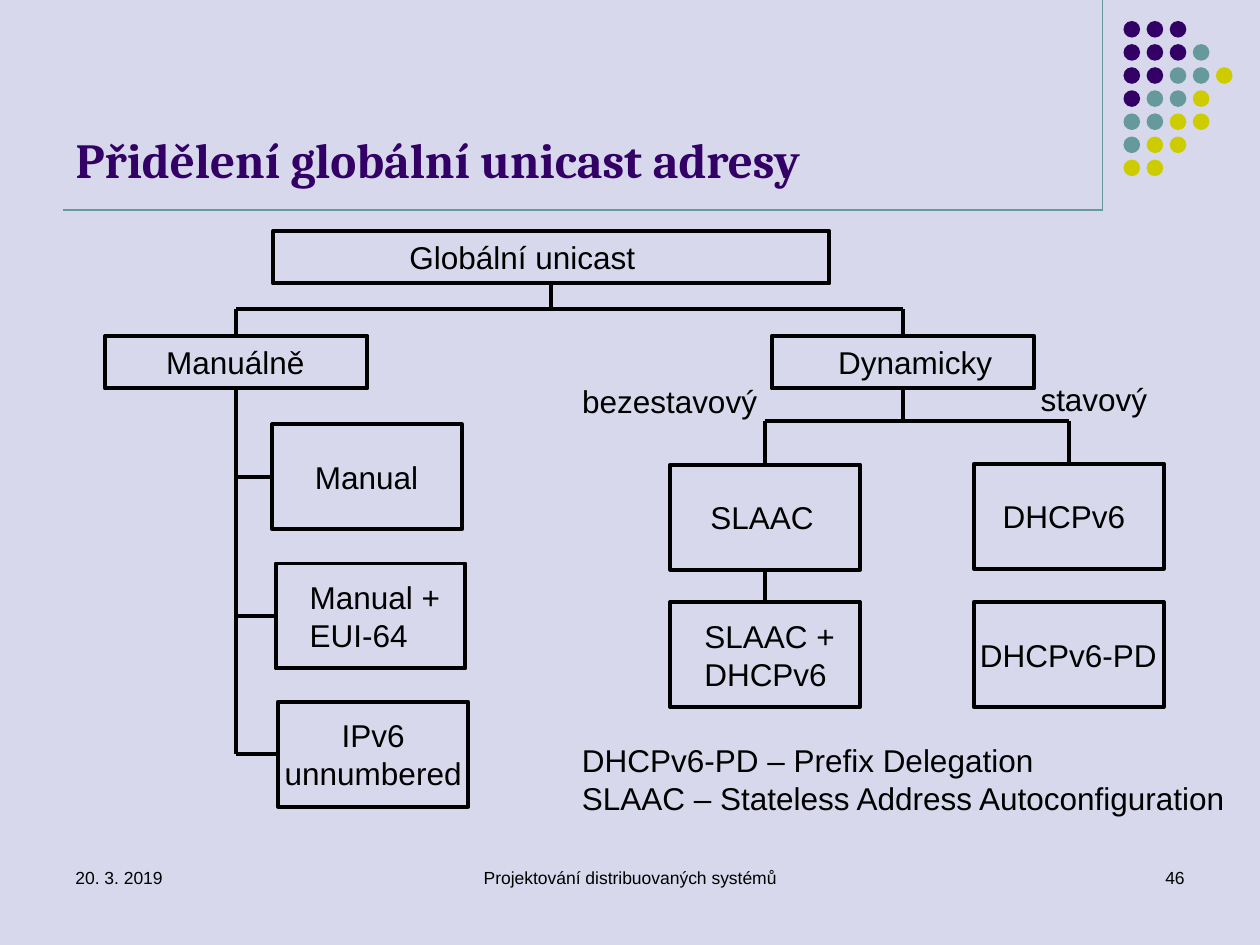
from lxml.etree import SubElement
from pptx import Presentation
from pptx.dml.color import RGBColor
from pptx.enum.shapes import MSO_CONNECTOR, MSO_SHAPE
from pptx.enum.text import MSO_ANCHOR, PP_ALIGN
from pptx.oxml.ns import qn
from pptx.util import Pt

BACKGROUND = RGBColor(0xD8, 0xD8, 0xEC)
PURPLE = RGBColor(0x33, 0x00, 0x66)
TEAL = RGBColor(0x66, 0x99, 0x99)
YELLOW = RGBColor(0xCC, 0xCC, 0x00)
BLACK = RGBColor(0, 0, 0)
TOP, LEFT, BOTTOM = 0, 1, 2

presentation = Presentation()
presentation.slide_width = Pt(720)
presentation.slide_height = Pt(540)
slide = presentation.slides.add_slide(presentation.slide_layouts[5])
slide.background.fill.solid()
slide.background.fill.fore_color.rgb = BACKGROUND


def add_line(x1, y1, x2, y2, color=BLACK, width=2.25):
    line = slide.shapes.add_connector(
        MSO_CONNECTOR.STRAIGHT, Pt(x1), Pt(y1), Pt(x2), Pt(y2))
    line.line.color.rgb = color
    line.line.width = Pt(width)
    SubElement(line._element.spPr, qn("a:effectLst"))
    return line


def write(shape, text, size=18, align=PP_ALIGN.LEFT):
    shape.text_frame.text = text
    for paragraph in shape.text_frame.paragraphs:
        paragraph.alignment = align
        paragraph.font.name = "Arial"
        paragraph.font.size = Pt(size)
        paragraph.font.color.rgb = BLACK


# Title, its rules and the dot ornament
add_line(630, 0, 630, 120, TEAL, 0.75)
add_line(36, 120, 630, 120, TEAL, 0.75)

dot_colors = {"P": PURPLE, "T": TEAL, "Y": YELLOW}
dot_rows = ["PPP", "PPPT", "PPTTY", "PTTY", "TTYY", "TYY", "YY"]
for row, letters in enumerate(dot_rows):
    for column, letter in enumerate(letters):
        dot = slide.shapes.add_shape(
            MSO_SHAPE.OVAL, Pt(642 + 13.2 * column), Pt(12 + 13.2 * row), Pt(9.5), Pt(9.5))
        dot.shadow.inherit = False
        dot.fill.solid()
        dot.fill.fore_color.rgb = dot_colors[letter]
        dot.line.fill.background()

title = slide.shapes.title
title.left, title.top, title.width, title.height = Pt(36), Pt(9.5), Pt(594), Pt(102)
title.text_frame.text = "Přidělení globální unicast adresy"
title.text_frame.vertical_anchor = MSO_ANCHOR.BOTTOM
heading = title.text_frame.paragraphs[0]
heading.alignment = PP_ALIGN.LEFT
heading.font.name = "Cambria"
heading.font.size = Pt(28)
heading.font.bold = True
heading.font.color.rgb = PURPLE

# Tree boxes: name, text, left, top, width, height, left inset of the text
boxes = {}
for name, text, left, top, width, height, inset in [
    ("root", "Globální unicast", 156, 132, 318, 30, 78),
    ("manually", "Manuálně", 60, 192, 150, 30, 35),
    ("dynamically", "Dynamicky", 441, 192, 150, 30, 38),
    ("manual", "Manual", 155.5, 242.5, 108.5, 60, 24.5),
    ("eui64", "Manual +\nEUI-64", 157.5, 322, 108.5, 60, 19.5),
    ("unnumbered", "IPv6\vunnumbered", 159, 401, 108.5, 60, 0),
    ("slaac", "SLAAC", 383, 265.5, 108.5, 60, 23),
    ("dhcp", "DHCPv6", 556.5, 265, 108.5, 60, 16.5),
    ("slaac_dhcp", "SLAAC +\vDHCPv6", 383, 344, 108.5, 60, 19.5),
    ("dhcp_pd", "DHCPv6-PD", 556.5, 344, 108.5, 60, 3.5),
]:
    box = slide.shapes.add_shape(
        MSO_SHAPE.RECTANGLE, Pt(left), Pt(top), Pt(width), Pt(height))
    box.shadow.inherit = False
    box.fill.background()
    box.line.color.rgb = BLACK
    box.line.width = Pt(2.25)
    frame = box.text_frame
    frame.margin_left = Pt(inset)
    frame.margin_right = frame.margin_top = frame.margin_bottom = 0
    frame.vertical_anchor = MSO_ANCHOR.MIDDLE
    write(box, text, align=PP_ALIGN.LEFT if inset else PP_ALIGN.CENTER)
    boxes[name] = box

# Bars of the tree and the stubs that join boxes to them
upper_bar, lower_bar, trunk = 176.5, 240.5, 135
add_line(trunk, upper_bar, 516, upper_bar)
add_line(437.25, lower_bar, 610.75, lower_bar)

for name, side, bar in [
    ("root", BOTTOM, upper_bar),
    ("manually", TOP, upper_bar),
    ("dynamically", TOP, upper_bar),
    ("manually", BOTTOM, 431),
    ("dynamically", BOTTOM, lower_bar),
    ("slaac", TOP, lower_bar),
    ("dhcp", TOP, lower_bar),
]:
    box = boxes[name]
    center = (box.left + box.width / 2) / Pt(1)
    add_line(center, bar, center, bar).end_connect(box, side)

for name in ["manual", "eui64", "unnumbered"]:
    box = boxes[name]
    middle = (box.top + box.height / 2) / Pt(1)
    add_line(trunk, middle, trunk, middle).end_connect(box, LEFT)

slaac_link = add_line(437.25, 325.5, 437.25, 344)
slaac_link.begin_connect(boxes["slaac"], BOTTOM)
slaac_link.end_connect(boxes["slaac_dhcp"], TOP)

# Branch labels, legend and footer
for text, left, top, width, height, size, align in [
    ("bezestavový", 325.5, 214.5, 115, 29, 18, PP_ALIGN.LEFT),
    ("stavový", 587.5, 213.5, 76, 29, 18, PP_ALIGN.LEFT),
    ("DHCPv6-PD – Prefix Delegation\vSLAAC – Stateless Address Autoconfiguration",
     325.5, 420, 388, 51, 18, PP_ALIGN.LEFT),
    ("20. 3. 2019", 36, 492, 168, 36, 10, PP_ALIGN.LEFT),
    ("Projektování distribuovaných systémů", 246, 492, 228, 36, 10, PP_ALIGN.CENTER),
    ("46", 516, 492, 168, 36, 10, PP_ALIGN.RIGHT),
]:
    label = slide.shapes.add_textbox(Pt(left), Pt(top), Pt(width), Pt(height))
    label.text_frame.word_wrap = True
    write(label, text, size, align)

presentation.save("out.pptx")
